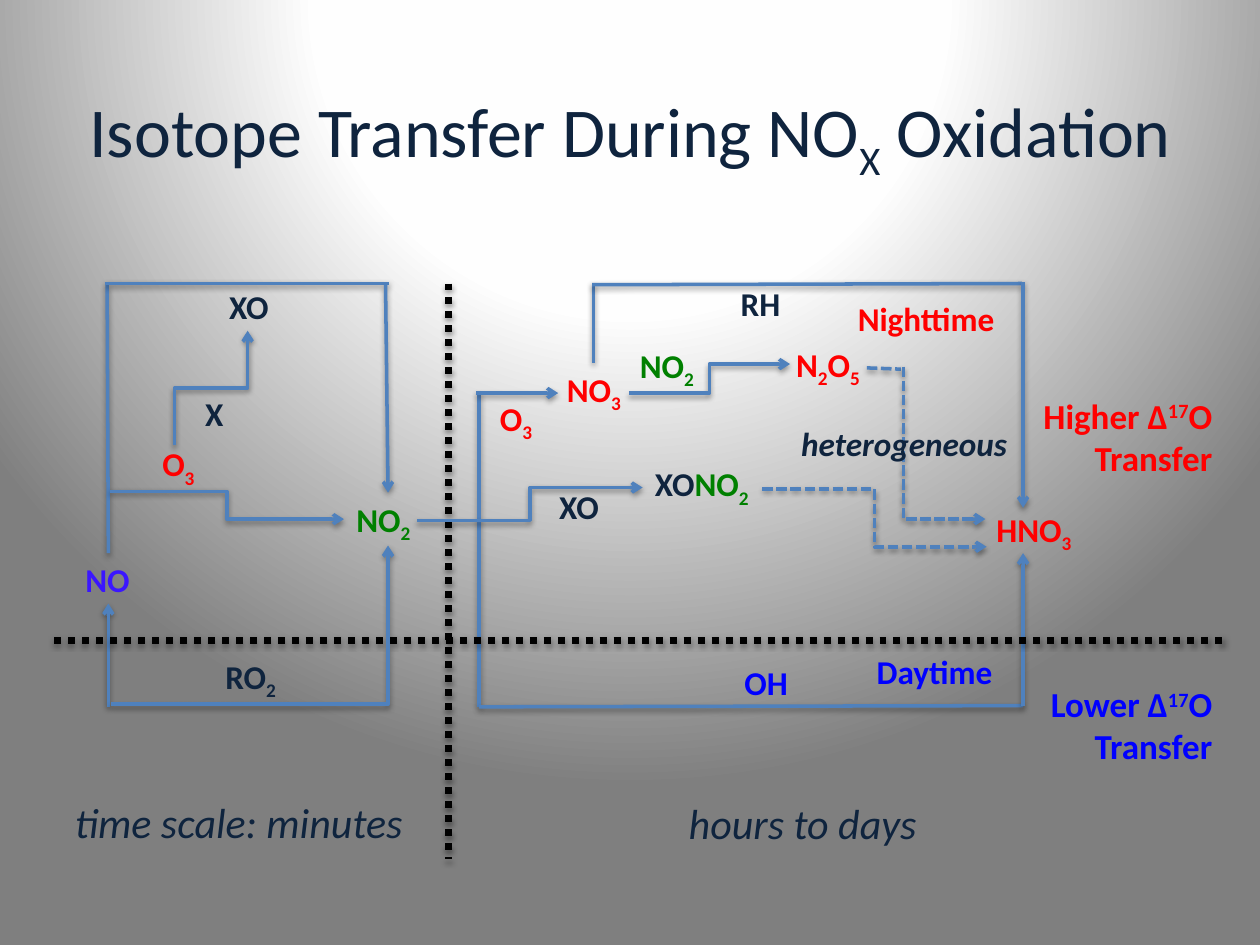
from pptx import Presentation
from pptx.dml.color import RGBColor
from pptx.enum.dml import MSO_LINE
from pptx.enum.shapes import MSO_CONNECTOR
from pptx.enum.text import MSO_ANCHOR, PP_ALIGN
from pptx.oxml import parse_xml
from pptx.oxml.ns import nsdecls, qn
from pptx.util import Inches, Pt

STRAIGHT, ELBOW = MSO_CONNECTOR.STRAIGHT, MSO_CONNECTOR.ELBOW
DASH, DOT = MSO_LINE.SQUARE_DOT, MSO_LINE.ROUND_DOT
LEFT, CENTER, RIGHT = PP_ALIGN.LEFT, PP_ALIGN.CENTER, PP_ALIGN.RIGHT
MIDDLE = MSO_ANCHOR.MIDDLE
FONT = "Calibri"
SUB, SUPER = -25, 30
COLORS = {
    "navy": "0F243E", "steel": "4F81BD", "black": "000000", "red": "FF0000",
    "blue": "0000FF", "violet": "3B16FF", "green": "008000",
    "white": "FFFFFF", "near_white": "FEFEFE", "grey": "7F7F7F",
}

presentation = Presentation()
presentation.slide_width = Inches(10)
presentation.slide_height = Inches(7.5)
COLUMN = presentation.slide_width / 100
ROW = presentation.slide_height / 75
slide = presentation.slides.add_slide(presentation.slide_layouts[5])

stops = "".join(
    f'<a:gs pos="{position * 1000}"><a:srgbClr val="{COLORS[name]}"/></a:gs>'
    for position, name in ((0, "white"), (40, "near_white"), (100, "grey"))
)
background = parse_xml(
    f'<p:bg {nsdecls("p", "a")}><p:bgPr><a:gradFill rotWithShape="1"><a:gsLst>{stops}</a:gsLst>'
    '<a:path path="circle"><a:fillToRect l="50000" t="-80000" r="50000" b="180000"/></a:path>'
    '</a:gradFill><a:effectLst/></p:bgPr></p:bg>'
)
slide.element.cSld.insert(0, background)


def add_runs(paragraph, runs, size, color, bold=False, italic=False):
    for text, baseline, *override in runs:
        run = paragraph.add_run()
        run.text = text
        font = run.font
        font.name, font.size, font.bold, font.italic = FONT, Pt(size), bold, italic
        font.color.rgb = RGBColor.from_string(COLORS[override[0] if override else color])
        if baseline:
            run._r.get_or_add_rPr().set("baseline", str(baseline * 1000))


def add_line(kind, x1, y1, x2, y2, arrow=False, dash=None, color="steel", weight=2):
    connector = slide.shapes.add_connector(
        kind, round(x1 * COLUMN), round(y1 * ROW), round(x2 * COLUMN), round(y2 * ROW))
    connector.line.color.rgb = RGBColor.from_string(COLORS[color])
    connector.line.width = Pt(weight)
    if dash:
        connector.line.dash_style = dash
    properties = connector._element.spPr
    if arrow:
        properties.find(qn("a:ln")).append(parse_xml(f'<a:tailEnd {nsdecls("a")} type="arrow"/>'))
    properties.append(parse_xml(
        f'<a:effectLst {nsdecls("a")}><a:outerShdw blurRad="40000" dist="20000" dir="5400000" '
        f'rotWithShape="0"><a:srgbClr val="{COLORS["black"]}"><a:alpha val="38000"/></a:srgbClr>'
        '</a:outerShdw></a:effectLst>'))
    return connector


title = slide.shapes.title
title.left, title.top = round(1.8 * COLUMN), round(2.7 * ROW)
title.width, title.height = round(96.4 * COLUMN), round(16.1 * ROW)
title.text_frame.vertical_anchor = MIDDLE
title_paragraph = title.text_frame.paragraphs[0]
title_paragraph.alignment = CENTER
add_runs(title_paragraph, [("Isotope Transfer During NO", 0), ("X", SUB), (" Oxidation", 0)], 40, "navy")

straight_lines = [
    (8.6, 43.9, 8.5, 22.6), (8.3, 22.5, 30.9, 22.5), (30.6, 22.6, 30.8, 39.1, True),
    (8.6, 56.1, 8.6, 47.9, True),
    (38, 56.1, 38, 31.1), (37.8, 31.2, 44.3, 31.2, True),
    (47.1, 28.8, 47.1, 22.5), (47, 22.6, 81.1, 22.5), (81.2, 22.4, 81.2, 40.3, True),
    (38, 56.1, 81.2, 56), (81.2, 56, 81.2, 43.9, True),
    (68.8, 29.2, 71.5, 29.3, False, DASH),
    (4.3, 50.8, 97.2, 50.8, False, DOT, "black", 4),
    (35.6, 22.5, 35.6, 68.2, False, DOT, "black", 4),
]
for line in straight_lines:
    add_line(STRAIGHT, *line)

elbows = [
    (8.7, 39, 27.3, 41.2, None, "bentConnector3", 0),
    (21.3, 33.7, 12.2, 27.9, None, "bentConnector3", 90),
    (8.8, 55.9, 30.8, 43.3, None, "bentConnector2", 0),
    (33.1, 41.3, 51, 38.7, None, "bentConnector3", 0),
    (49.9, 31.2, 62.7, 28.9, None, "bentConnector3", 0),
    (60.5, 38.8, 78.3, 43.4, DASH, "bentConnector3", 0),
    (81, 31.9, 68.9, 38.4, DASH, "bentConnector2", 270),
]
for x1, y1, x2, y2, dash, preset, rotation in elbows:
    elbow = add_line(ELBOW, x1, y1, x2, y2, True, dash)
    elbow._element.spPr.find(qn("a:prstGeom")).set("prst", preset)
    elbow._element.spPr.find(qn("a:xfrm")).set("rot", str(rotation * 60000))

species = [
    (5.8, 43.9, 5.6, "violet", [("NO", 0)]),
    (11.9, 34.7, 5.6, "red", [("O", 0), ("3", SUB)]),
    (15.3, 30.7, 5.6, "navy", [("X", 0)]),
    (17.2, 22.2, 5.6, "navy", [("XO", 0)]),
    (27.3, 39.1, 7.1, "green", [("NO", 0), ("2", SUB)]),
    (16.9, 51.6, 7.1, "navy", [("RO", 0), ("2", SUB)]),
    (43.4, 38.1, 5.6, "navy", [("XO", 0)]),
    (51, 36.3, 10.6, "green", [("XO", 0, "navy"), ("NO", 0), ("2", SUB)]),
    (44, 28.8, 7.1, "red", [("NO", 0), ("3", SUB)]),
    (62.2, 26.8, 10.6, "red", [("N", 0), ("2", SUB), ("O", 0), ("5", SUB)]),
    (38.7, 31.1, 5.6, "red", [("O", 0), ("3", SUB)]),
    (49.8, 26.9, 7.1, "green", [("NO", 0), ("2", SUB)]),
    (57.8, 22, 7.1, "navy", [("RH", 0)]),
    (58.1, 52.1, 7.1, "blue", [("OH", 0)]),
    (67.1, 23.2, 15.4, "red", [("Nighttime", 0)]),
    (68.6, 51.2, 15.4, "blue", [("Daytime", 0)]),
    (78.1, 39.9, 8.9, "red", [("HNO", 0), ("3", SUB)]),
]
labels = [(x, y, width, 4.2, LEFT, runs, 19, color, True, False)
          for x, y, width, color, runs in species]
labels += [
    (81.8, 53.7, 15.4, 7.7, RIGHT, [("Lower Δ", 0), ("17", SUPER), ("O Transfer", 0)], 20, "blue", True, False),
    (80.9, 30.8, 16.3, 7.7, RIGHT, [("Higher Δ", 0), ("17", SUPER), ("O Transfer", 0)], 20, "red", True, False),
    (4.8, 62.7, 28.3, 5, CENTER, [("time scale: minutes", 0)], 24, "navy", False, True),
    (51.3, 62.8, 24.8, 5, CENTER, [("hours to days", 0)], 24, "navy", False, True),
    (62.6, 33.1, 21.2, 4.2, LEFT, [("heterogeneous", 0)], 19, "navy", True, True),
]
for x, y, width, height, alignment, *text_style in labels:
    label = slide.shapes.add_textbox(
        round(x * COLUMN), round(y * ROW), round(width * COLUMN), round(height * ROW))
    label.text_frame.word_wrap = True
    paragraph = label.text_frame.paragraphs[0]
    paragraph.alignment = alignment
    add_runs(paragraph, *text_style)

presentation.save("out.pptx")
